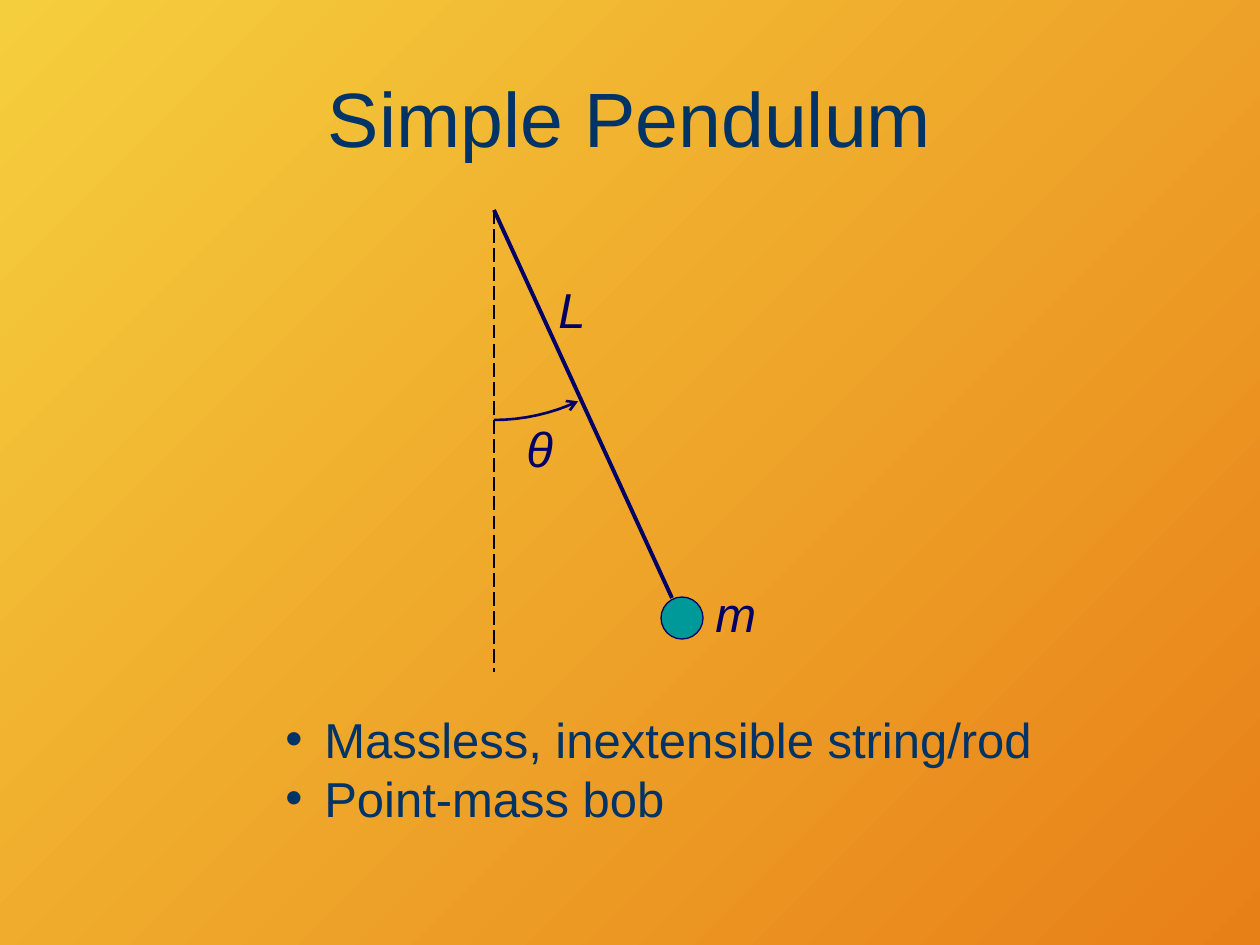
import math

import lxml.etree
import pptx
import pptx.dml.color
import pptx.enum.dml
import pptx.enum.shapes
import pptx.enum.text
import pptx.oxml
import pptx.oxml.ns
import pptx.util

PX = 914400 / 126
FONT = "Arial"
YELLOW = pptx.dml.color.RGBColor(0xF5, 0xCE, 0x3D)
ORANGE = pptx.dml.color.RGBColor(0xE8, 0x80, 0x18)
SLATE = pptx.dml.color.RGBColor(0x00, 0x33, 0x66)
NAVY = pptx.dml.color.RGBColor(0x00, 0x00, 0x66)
TEAL = pptx.dml.color.RGBColor(0x00, 0x99, 0x99)
BLACK = pptx.dml.color.RGBColor(0x00, 0x00, 0x00)


def px(*lengths):
    """Turn pixel lengths into a list of EMU lengths."""
    return [pptx.util.Emu(round(length * PX)) for length in lengths]


def add_child(parent, tag, **attributes):
    """Append a DrawingML element to a parent element."""
    return lxml.etree.SubElement(parent, pptx.oxml.ns.qn(tag), attributes)


def paint_background(slide):
    """Fill the slide with a diagonal yellow to orange gradient."""
    fill = slide.background.fill
    fill.gradient()
    fill.gradient_angle = 315
    for stop, color, position in zip(fill.gradient_stops, (YELLOW, ORANGE), (0, 1)):
        stop.color.rgb = color
        stop.position = position


def add_text(shapes, box, lines, size, color, italic=None, wrap=False):
    """Add a text box with one paragraph for each line and return its frame."""
    text_frame = shapes.add_textbox(*px(*box)).text_frame
    text_frame.word_wrap = wrap
    text_frame.text = "\n".join(lines)
    for paragraph in text_frame.paragraphs:
        font = paragraph.runs[0].font
        font.name, font.size, font.italic = FONT, pptx.util.Pt(size), italic
        font.color.rgb = color
    return text_frame


def add_title(slide, box):
    """Add the centred slide title."""
    text_frame = add_text(slide.shapes, box, ["Simple Pendulum"], 44, SLATE, wrap=True)
    text_frame.vertical_anchor = pptx.enum.text.MSO_ANCHOR.MIDDLE
    text_frame.paragraphs[0].alignment = pptx.enum.text.PP_ALIGN.CENTER


def add_line(shapes, start, end, color, width):
    """Add a straight line without shadow and return it."""
    straight = pptx.enum.shapes.MSO_CONNECTOR.STRAIGHT
    connector = shapes.add_connector(straight, *px(*start, *end))
    connector.line.color.rgb = color
    connector.line.width = pptx.util.Pt(width)
    add_child(connector.element.spPr, "a:effectLst")
    return connector


def add_angle_arc(shapes, left, top, radius):
    """Draw the arrow that sweeps from the vertical to the rod."""
    angles = [math.radians(90 - 25 * step / 8) for step in range(9)]
    points = [
        px(left + radius * math.cos(angle), top + radius * math.sin(angle))
        for angle in angles
    ]
    builder = shapes.build_freeform(*points[0])
    builder.add_line_segments(points[1:], close=False)
    arc = builder.convert_to_shape()
    arc.shadow.inherit = False
    arc.fill.background()
    arc.line.color.rgb = NAVY
    arc.line.width = pptx.util.Pt(1.5)
    add_child(arc.line._get_or_add_ln(), "a:tailEnd", type="arrow")


def add_bob(shapes, box):
    """Draw the round pendulum bob."""
    bob = shapes.add_shape(pptx.enum.shapes.MSO_SHAPE.OVAL, *px(*box))
    bob.shadow.inherit = False
    bob.fill.solid()
    bob.fill.fore_color.rgb = TEAL
    bob.line.color.rgb = NAVY
    bob.line.width = pptx.util.Pt(0.75)


def add_pendulum(slide, box):
    """Draw the grouped pendulum with its pivot at the top left of the box."""
    left, top, width, height = box
    shapes = slide.shapes.add_group_shape().shapes
    vertical = add_line(shapes, (left, top), (left, top + height), BLACK, 1)
    vertical.line.dash_style = pptx.enum.dml.MSO_LINE.LONG_DASH
    add_line(shapes, (left, top), (left + 178, top + 388), NAVY, 2.25)
    add_bob(shapes, (left + 167, top + 387, 42, 42))
    add_angle_arc(shapes, left, top + 11, 199)
    labels = [
        ("θ", 20, 202, 66, True),
        ("L", 52, 63, 53, False),
        ("m", width - 67, 367, 67, False),
    ]
    for label, x, y, label_width, wrap in labels:
        label_box = (left + x, top + y, label_width, 72)
        add_text(shapes, label_box, [label], 28, NAVY, italic=True, wrap=wrap)


def add_assumptions(slide, box):
    """Add the bulleted list of assumptions."""
    lines = ["Massless, inextensible string/rod", "Point-mass bob"]
    text_frame = add_text(slide.shapes, box, lines, 28, SLATE)
    indent = px(39)[0]
    for paragraph in text_frame.paragraphs:
        properties = paragraph._p.get_or_add_pPr()
        properties.set("marL", str(indent))
        properties.set("indent", str(-indent))
        add_child(properties, "a:buFont", typeface=FONT)
        add_child(properties, "a:buChar", char="•")


def main():
    """Build and save the pendulum slide."""
    presentation = pptx.Presentation()
    presentation.slide_width, presentation.slide_height = px(1260, 945)
    slide = presentation.slides.add_slide(presentation.slide_layouts[6])
    paint_background(slide)
    add_title(slide, (63, 38, 1134, 158))
    add_pendulum(slide, (494, 210, 276, 462))
    add_assumptions(slide, (273, 703, 774, 130))
    presentation.save("out.pptx")


if __name__ == "__main__":
    main()
